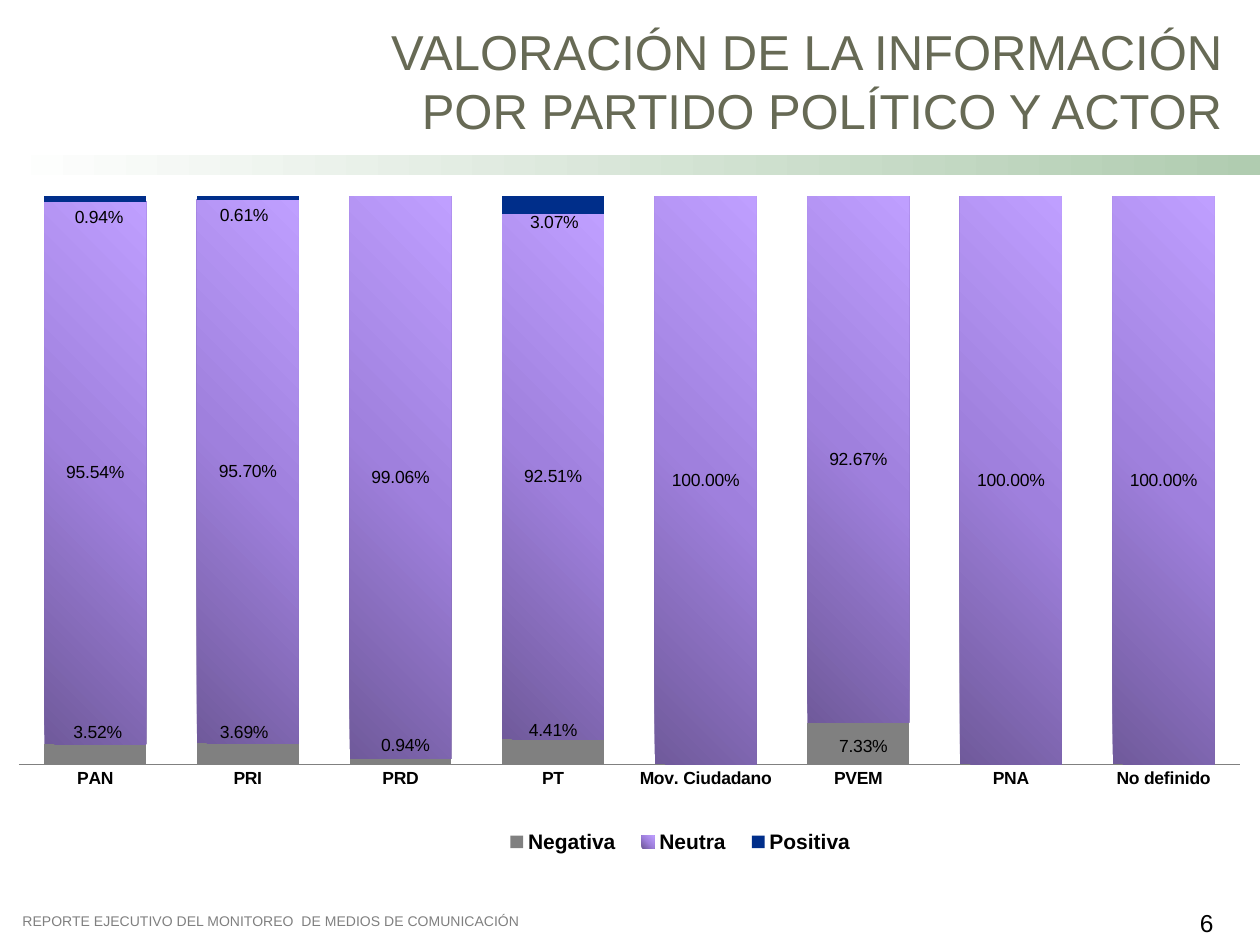
from dataclasses import dataclass
from typing import Any

from lxml import etree
from pptx import Presentation
from pptx.chart.data import CategoryChartData
from pptx.dml.color import RGBColor
from pptx.enum.chart import (XL_CHART_TYPE, XL_LABEL_POSITION,
                             XL_LEGEND_POSITION, XL_TICK_MARK)
from pptx.enum.shapes import MSO_SHAPE
from pptx.enum.text import MSO_ANCHOR, MSO_AUTO_SIZE, PP_ALIGN
from pptx.oxml import parse_xml
from pptx.oxml.ns import nsdecls, qn
from pptx.util import Inches, Pt

STACKED = XL_CHART_TYPE.COLUMN_STACKED_100
CENTER = XL_LABEL_POSITION.CENTER
BOTTOM = XL_LEGEND_POSITION.BOTTOM
NO_TICK = XL_TICK_MARK.NONE
RECTANGLE = MSO_SHAPE.RECTANGLE
LEFT, RIGHT = PP_ALIGN.LEFT, PP_ALIGN.RIGHT
MIDDLE, TOP = MSO_ANCHOR.MIDDLE, MSO_ANCHOR.TOP
NO_FIT = MSO_AUTO_SIZE.NONE

COLORS = {"white": "FFFFFF", "band": "B0CCB0", "title": "676A55",
          "black": "000000", "gray": "808080", "blue": "002E8A",
          "purple_dark": "705A9B", "purple": "9F80DD", "purple_light": "BF9FFF"}
PERCENT = "0.00%"
PARTIES = ["PAN", "PRI", "PRD", "PT", "Mov. Ciudadano", "PVEM", "PNA", "No definido"]
RATINGS = {
    "Negativa": [0.0352, 0.0369, 0.0094, 0.0441, None, 0.0733, None, None],
    "Neutra": [0.9554, 0.957, 0.9906, 0.9251, 1, 0.9267, 1, 1],
    "Positiva": [0.0094, 0.0061, None, 0.0307, None, None, None, None],
}
FILLS = {"Negativa": ["gray"], "Neutra": ["purple_dark", "purple", "purple_light"],
         "Positiva": ["blue"]}
LABEL_SHIFTS = {
    "Negativa": {0: (0.002, -0.03), 1: (-0.003, -0.03), 2: (0.004, -0.022),
                 3: (0, -0.03), 5: (0.004, 0.004)},
    "Positiva": {0: (0.003, 0.026), 1: (-0.003, 0.024), 3: (0.001, 0.024)},
}


@dataclass
class SlideBuilder:
    page: Any
    font: str = "Arial"

    def color(self, name):
        return RGBColor.from_string(COLORS[name])

    def style(self, font, size, color="black", bold=False):
        font.name = self.font
        font.size = Pt(size)
        font.bold = bold
        font.color.rgb = self.color(color)

    def gradient(self, fill, element, names, angle):
        fill.gradient()
        old = element.find(".//" + qn("a:gradFill"))
        stops = "".join(
            f'<a:gs pos="{100000 * i // (len(names) - 1)}">'
            f'<a:srgbClr val="{COLORS[name]}"/></a:gs>' for i, name in enumerate(names))
        new = parse_xml(f'<a:gradFill {nsdecls("a")} rotWithShape="1"><a:gsLst>{stops}'
                        f'</a:gsLst><a:lin ang="{angle * 60000}" scaled="0"/></a:gradFill>')
        old.getparent().replace(old, new)

    def layout(self, x, y, width=None, height=None, inner=False):
        node = etree.Element(qn("c:layout"))
        manual = etree.SubElement(node, qn("c:manualLayout"))
        parts = []
        if inner:
            parts.append(("layoutTarget", "inner"))
        if width:
            parts += [("xMode", "edge"), ("yMode", "edge")]
        parts += [("x", x), ("y", y)]
        if width:
            parts += [("w", width), ("h", height)]
        for tag, value in parts:
            etree.SubElement(manual, qn("c:" + tag)).set("val", str(value))
        return parse_xml(etree.tostring(node))

    def place(self, element, layout, after=None):
        for old in element.findall(qn("c:layout")):
            element.remove(old)
        if after is None:
            element.insert(0, layout)
        else:
            element.find(qn(after)).addnext(layout)

    def band(self, left, top, width, height):
        box = self.page.shapes.add_shape(
            RECTANGLE, Inches(left), Inches(top), Inches(width), Inches(height))
        box.shadow.inherit = False
        box.line.fill.background()
        self.gradient(box.fill, box._element, ["white", "band"], 0)

    def fill_text(self, box, text, size, color, align, anchor=TOP):
        frame = box.text_frame
        frame.word_wrap = True
        frame.auto_size = NO_FIT
        frame.vertical_anchor = anchor
        para = frame.paragraphs[0]
        para.alignment = align
        span = para.add_run()
        span.text = text
        self.style(span.font, size, color)

    def title(self, text, left, top, width, height):
        box = self.page.shapes.title
        box.left, box.top = Inches(left), Inches(top)
        box.width, box.height = Inches(width), Inches(height)
        self.fill_text(box, text, 28, "title", RIGHT, MIDDLE)

    def text(self, text, left, top, width, height, size, color, align=LEFT):
        box = self.page.shapes.add_textbox(
            Inches(left), Inches(top), Inches(width), Inches(height))
        self.fill_text(box, text, size, color, align)

    def series(self, series):
        names = FILLS[series.name]
        fill = series.format.fill
        if len(names) > 1:
            self.gradient(fill, series._element, names, 315)
        else:
            fill.solid()
            fill.fore_color.rgb = self.color(names[0])
        series.invert_if_negative = False
        labels = series.data_labels
        labels.show_value = True
        labels.number_format = PERCENT
        labels.number_format_is_linked = False
        self.style(labels.font, 10)
        for index, shift in LABEL_SHIFTS.get(series.name, {}).items():
            label = series.points[index].data_label
            label.position = CENTER
            self.style(label.font, 10)
            element = series._element.xpath(f'.//c:dLbl[c:idx/@val="{index}"]')[0]
            self.place(element, self.layout(*shift), "c:idx")
            element.find(qn("c:layout")).addnext(parse_xml(
                f'<c:numFmt {nsdecls("c")} formatCode="{PERCENT}" sourceLinked="0"/>'))

    def chart(self, left, top, width, height):
        data = CategoryChartData(number_format=PERCENT)
        data.categories = PARTIES
        for name, values in RATINGS.items():
            data.add_series(name, values)
        chart = self.page.shapes.add_chart(
            STACKED, Inches(left), Inches(top), Inches(width), Inches(height), data).chart
        self.style(chart.font, 18)
        chart.has_title = False
        plot = chart.plots[0]
        plot.gap_width, plot.overlap = 50, 100
        plot.vary_by_categories = False
        for series in plot.series:
            self.series(series)
        parties = chart.category_axis
        parties.major_tick_mark = NO_TICK
        parties.format.line.color.rgb = self.color("gray")
        self.style(parties.tick_labels.font, 10, bold=True)
        chart.value_axis.has_major_gridlines = False
        chart.value_axis.maximum_scale = 1
        chart.value_axis.visible = False
        chart.has_legend = True
        legend = chart.legend
        legend.position = BOTTOM
        legend.include_in_layout = False
        self.style(legend.font, 12, bold=True)
        self.place(legend._element, self.layout(0.39, 0.9, 0.3, 0.05), "c:legendPos")
        area = chart._chartSpace.chart.plotArea
        self.place(area, self.layout(0.015, 0.026, 0.969, 0.791, inner=True))


def main():
    deck = Presentation()
    deck.slide_width, deck.slide_height = Inches(10), Inches(7.5)
    builder = SlideBuilder(deck.slides.add_slide(deck.slide_layouts[5]))
    builder.band(0, 1.23, 10, 0.16)
    builder.title("VALORACIÓN DE LA INFORMACIÓN POR PARTIDO POLÍTICO Y ACTOR",
                  2.24, 0.13, 7.56, 1.02)
    builder.text("6", 8.47, 7.16, 1.26, 0.29, 14, "black", RIGHT)
    builder.chart(0, 1.41, 10, 5.7)
    builder.text("REPORTE EJECUTIVO DEL MONITOREO  DE MEDIOS DE COMUNICACIÓN",
                 0.08, 7.19, 4.69, 0.24, 8, "gray")
    deck.save("out.pptx")


if __name__ == "__main__":
    main()
